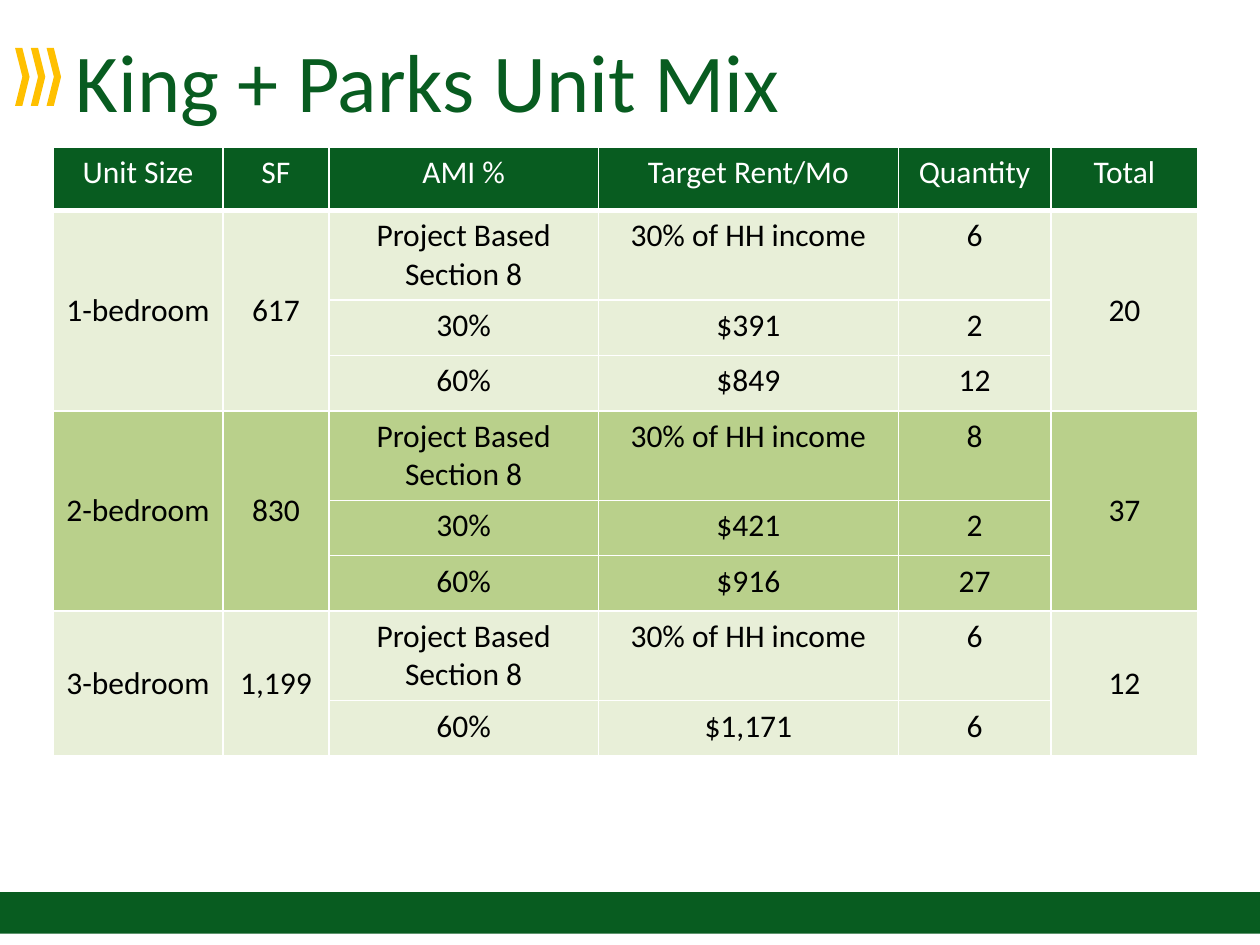
from dataclasses import dataclass

from lxml.etree import SubElement
from pptx import Presentation
from pptx.dml.color import RGBColor
from pptx.enum.shapes import MSO_SHAPE
from pptx.enum.text import MSO_ANCHOR, MSO_AUTO_SIZE, PP_ALIGN
from pptx.oxml.ns import qn
from pptx.slide import Slide
from pptx.table import Table, _Cell
from pptx.text.text import TextFrame
from pptx.util import Inches, Length, Pt


@dataclass(frozen=True)
class Theme:
    font: str = "Calibri"
    title_size: int = 47
    table_size: int = 18
    green: str = "085C20"
    gold: str = "FFC000"
    light: str = "E8EFD8"
    medium: str = "B9D08B"
    white: str = "FFFFFF"
    black: str = "000000"
    thin_line: int = 1
    thick_line: int = 3


@dataclass(frozen=True)
class Area:
    column: float
    row: float
    columns: float
    rows: float

    def lengths(self) -> tuple[Length, ...]:
        return tuple(map(grid, (self.column, self.row, self.columns, self.rows)))


@dataclass(frozen=True)
class Rent:
    income: str
    amount: str
    quantity: str


@dataclass(frozen=True)
class UnitType:
    name: str
    square_feet: str
    total: str
    color: str
    rents: tuple[Rent, ...]


THEME = Theme()
GRID_COLUMNS, GRID_ROWS = 100, 75
SECTION_8 = "Project Based Section 8"
SHARE_OF_INCOME = "30% of HH income"
HEADINGS = ("Unit Size", "SF", "AMI %", "Target Rent/Mo", "Quantity", "Total")
COLUMN_WIDTHS = (13.5, 8.4, 21.4, 23.8, 12.1, 11.7)
HEADER_HEIGHT, TALL_HEIGHT, ROW_HEIGHT = 5, 7.1, 4.4
UNIT_TYPES = (
    UnitType("1-bedroom", "617", "20", THEME.light, (
        Rent(SECTION_8, SHARE_OF_INCOME, "6"),
        Rent("30%", "$391", "2"),
        Rent("60%", "$849", "12"),
    )),
    UnitType("2-bedroom", "830", "37", THEME.medium, (
        Rent(SECTION_8, SHARE_OF_INCOME, "8"),
        Rent("30%", "$421", "2"),
        Rent("60%", "$916", "27"),
    )),
    UnitType("3-bedroom", "1,199", "12", THEME.light, (
        Rent(SECTION_8, SHARE_OF_INCOME, "6"),
        Rent("60%", "$1,171", "6"),
    )),
)


def grid(units: float) -> Length:
    return Inches(units / 10)


def write(frame: TextFrame, text: str, size: int, color: str, alignment: PP_ALIGN) -> None:
    paragraph = frame.paragraphs[0]
    paragraph.alignment = alignment
    run = paragraph.add_run()
    run.text = text
    run.font.name = THEME.font
    run.font.size = Pt(size)
    run.font.bold = False
    run.font.color.rgb = RGBColor.from_string(color)


def add_plain_shape(slide: Slide, kind: MSO_SHAPE, area: Area, color: str) -> None:
    shape = slide.shapes.add_shape(kind, *area.lengths())
    shape.shadow.inherit = False
    shape.fill.solid()
    shape.fill.fore_color.rgb = RGBColor.from_string(color)
    shape.line.fill.background()


def add_title(slide: Slide, text: str, area: Area) -> None:
    title = slide.shapes.title
    title.left, title.top, title.width, title.height = area.lengths()
    frame = title.text_frame
    frame.auto_size = MSO_AUTO_SIZE.NONE
    frame.vertical_anchor = MSO_ANCHOR.MIDDLE
    write(frame, text, THEME.title_size, THEME.green, PP_ALIGN.LEFT)


def style_cell(cell: _Cell, color: str, bottom_line: int = THEME.thin_line) -> None:
    properties = cell._tc.get_or_add_tcPr()
    for side in "LRTB":
        width = bottom_line if side == "B" else THEME.thin_line
        line = SubElement(properties, qn(f"a:ln{side}"), w=str(Pt(width)))
        fill = SubElement(line, qn("a:solidFill"))
        SubElement(fill, qn("a:srgbClr"), val=THEME.white)
    cell.fill.solid()
    cell.fill.fore_color.rgb = RGBColor.from_string(color)


def write_cell(cell: _Cell, text: str, color: str = THEME.black) -> None:
    write(cell.text_frame, text, THEME.table_size, color, PP_ALIGN.CENTER)


def fill_header(table: Table) -> None:
    for column, heading in enumerate(HEADINGS):
        cell = table.cell(0, column)
        style_cell(cell, THEME.green, THEME.thick_line)
        write_cell(cell, heading, THEME.white)


def fill_unit_type(table: Table, unit_type: UnitType, first_row: int) -> int:
    next_row = first_row + len(unit_type.rents)
    for row, rent in enumerate(unit_type.rents, first_row):
        for column in range(len(HEADINGS)):
            style_cell(table.cell(row, column), unit_type.color)
        for column, text in enumerate((rent.income, rent.amount, rent.quantity), 2):
            write_cell(table.cell(row, column), text)
    merged = {0: unit_type.name, 1: unit_type.square_feet, 5: unit_type.total}
    for column, text in merged.items():
        cell = table.cell(first_row, column)
        cell.merge(table.cell(next_row - 1, column))
        cell.vertical_anchor = MSO_ANCHOR.MIDDLE
        write_cell(cell, text)
    return next_row


def add_unit_table(slide: Slide, column: float, row: float) -> None:
    heights = [HEADER_HEIGHT] + [
        TALL_HEIGHT if rent.income == SECTION_8 else ROW_HEIGHT
        for unit_type in UNIT_TYPES for rent in unit_type.rents
    ]
    area = Area(column, row, sum(COLUMN_WIDTHS), sum(heights))
    table = slide.shapes.add_table(len(heights), len(HEADINGS), *area.lengths()).table
    table.horz_banding = False
    for table_column, width in zip(table.columns, COLUMN_WIDTHS):
        table_column.width = grid(width)
    for table_row, height in zip(table.rows, heights):
        table_row.height = grid(height)
    fill_header(table)
    next_row = 1
    for unit_type in UNIT_TYPES:
        next_row = fill_unit_type(table, unit_type, next_row)


def main() -> None:
    presentation = Presentation()
    presentation.slide_width = grid(GRID_COLUMNS)
    presentation.slide_height = grid(GRID_ROWS)
    slide = presentation.slides.add_slide(presentation.slide_layouts[5])
    add_plain_shape(slide, MSO_SHAPE.RECTANGLE, Area(0, 70.8, GRID_COLUMNS, 3.3), THEME.green)
    for index in range(3):
        chevron = Area(1.2 + 1.25 * index, 3.8, 1.15, 4.6)
        add_plain_shape(slide, MSO_SHAPE.CHEVRON, chevron, THEME.gold)
    add_title(slide, "King + Parks Unit Mix", Area(5, 1.7, 90, 9.2))
    add_unit_table(slide, 4.2, 11.7)
    presentation.save("out.pptx")


if __name__ == "__main__":
    main()
